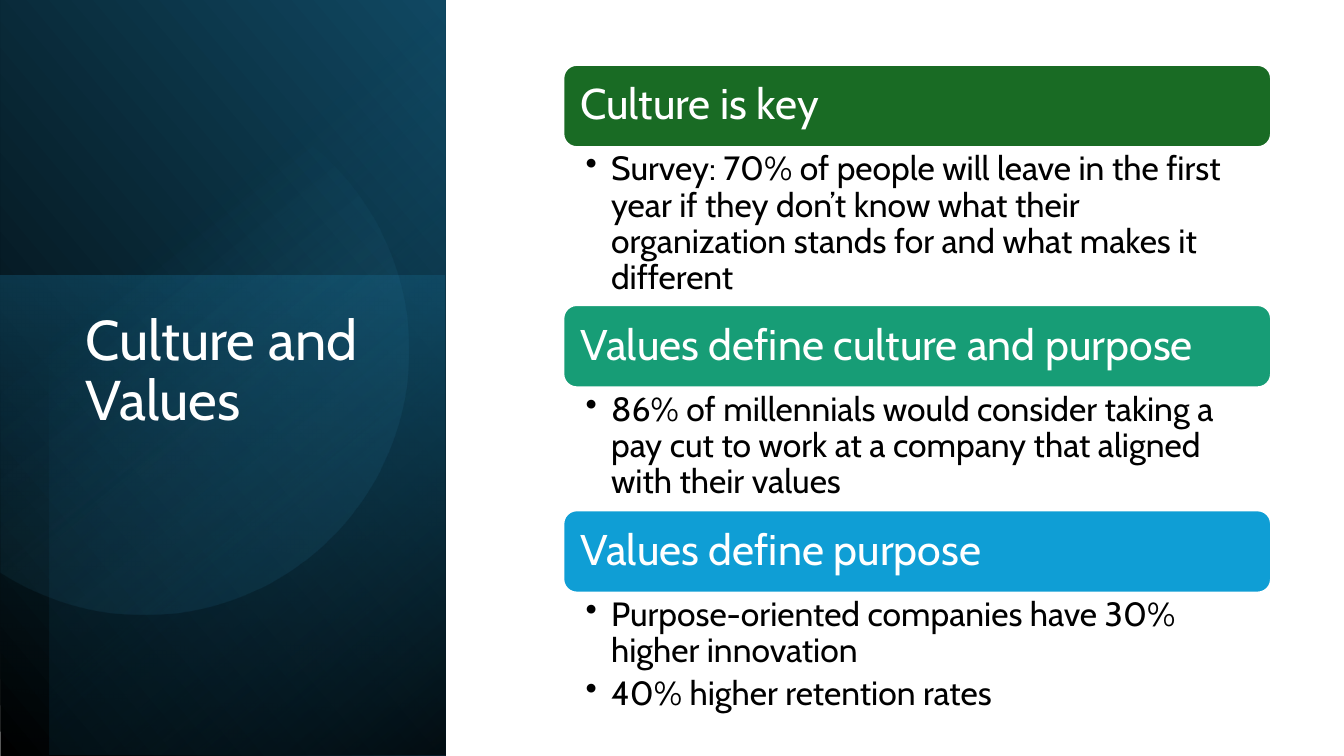
from dataclasses import dataclass
from math import cos, radians, sin

from lxml.etree import SubElement
from pptx import Presentation
from pptx.dml.color import RGBColor
from pptx.enum.shapes import MSO_SHAPE as Shape
from pptx.enum.text import MSO_ANCHOR as Anchor
from pptx.oxml.ns import qn
from pptx.util import Cm, Pt


@dataclass(frozen=True)
class Theme:
    font: str = "Cabin"
    title_size: float = 30
    heading_size: float = 23
    body_size: float = 18
    white: str = "FFFFFF"
    black: str = "000000"
    navy: str = "104862"
    teal: str = "156082"
    deep_teal: str = "0B3041"
    sky: str = "46B1E1"
    green: str = "196B24"
    sea_green: str = "179D76"
    blue: str = "0F9ED5"


def write_text(frame, paragraphs, *, font, size, color, anchor=Anchor.TOP,
               insets=(0.25, 0.13, 0.25, 0.13), space_after=0, bullet_indent=None):
    """Fill a text frame; insets and indent are in centimetres."""
    frame.word_wrap = True
    frame.vertical_anchor = anchor
    (frame.margin_left, frame.margin_top,
     frame.margin_right, frame.margin_bottom) = map(Cm, insets)
    for index, text in enumerate(paragraphs):
        paragraph = frame.add_paragraph() if index else frame.paragraphs[0]
        paragraph.line_spacing = 0.9
        paragraph.space_after = Pt(space_after)
        run = paragraph.add_run()
        run.text = text
        run.font.name = font
        run.font.size = Pt(size)
        run.font.color.rgb = RGBColor.from_string(color)
        if bullet_indent:
            properties = paragraph._p.get_or_add_pPr()
            properties.set("marL", str(Cm(bullet_indent)))
            properties.set("indent", str(-Cm(bullet_indent)))
            SubElement(properties, qn("a:buChar"), char="•")


class SlideBuilder:
    def __init__(self, slide, theme):
        self.slide = slide
        self.theme = theme

    def gradient(self, shape, stops, angle):
        """Apply two stops of (position, colour, opacity); angle is clockwise."""
        shape.shadow.inherit = False
        shape.line.fill.background()
        shape.fill.gradient()
        shape.fill.gradient_angle = 360 - angle
        for stop, (position, color, opacity) in zip(shape.fill.gradient_stops, stops):
            stop.position = position
            stop.color.rgb = RGBColor.from_string(color)
            color_element = stop._gs.find(qn("a:srgbClr"))
            SubElement(color_element, qn("a:alpha"), val=str(round(opacity * 100000)))

    def panel(self, box, stops, angle, rotation, flipped=False):
        shape = self.slide.shapes.add_shape(Shape.RECTANGLE, *map(Cm, box))
        shape.rotation = rotation
        if flipped:
            shape._element.spPr.xfrm.set("flipH", "1")
        self.gradient(shape, stops, angle)

    def cut_circle(self, center, radius, half_sweep, stops, angle, rotation):
        """Circle with its left side cut off, drawn unrotated and then turned."""
        steps = 120
        angles = [radians(-half_sweep - rotation + 2 * half_sweep * step / steps)
                  for step in range(steps + 1)]
        points = [(Cm(center[0] + radius * cos(a)), Cm(center[1] + radius * sin(a)))
                  for a in angles]
        builder = self.slide.shapes.build_freeform(*points[0])
        builder.add_line_segments(points[1:], close=True)
        shape = builder.convert_to_shape()
        shape.rotation = rotation
        self.gradient(shape, stops, angle)

    def bar(self, box, color):
        shape = self.slide.shapes.add_shape(Shape.ROUNDED_RECTANGLE, *map(Cm, box))
        shape.shadow.inherit = False
        shape.fill.solid()
        shape.fill.fore_color.rgb = RGBColor.from_string(color)
        shape.line.color.rgb = RGBColor.from_string(self.theme.white)
        shape.line.width = Pt(1.5)

    def text(self, box, paragraphs, **style):
        text_box = self.slide.shapes.add_textbox(*map(Cm, box))
        write_text(text_box.text_frame, paragraphs, font=self.theme.font, **style)


def main():
    theme = Theme()
    presentation = Presentation()
    presentation.slide_width = Cm(25.4)
    presentation.slide_height = Cm(14.29)
    slide = presentation.slides.add_slide(presentation.slide_layouts[6])
    builder = SlideBuilder(slide, theme)

    # Layered gradient panel on the left
    builder.panel((-2.95, 2.95, 14.33, 8.41),
                  [(0, theme.black, 1), (1, theme.navy, 1)],
                  angle=310, rotation=90, flipped=True)
    builder.panel((-0.33, 5.54, 9.07, 8.41),
                  [(0, theme.teal, 0.5), (1, theme.deep_teal, 0)],
                  angle=190, rotation=270)
    builder.panel((-2.46, 3.4, 14.27, 7.47),
                  [(0, theme.black, 0.59), (0.69, theme.teal, 0)],
                  angle=220, rotation=270, flipped=True)
    builder.cut_circle((3.45, 7.52), 5, 122.9,
                       [(0.39, theme.sky, 0), (1, theme.navy, 0.26)],
                       angle=310, rotation=101.6)

    # Title
    builder.text((1.37, 5.77, 5.99, 6.4), ["Culture and Values"],
                 size=theme.title_size, color=theme.white)

    # Stacked headings, each followed by its bullets
    sections = [
        ("Culture is key", theme.green, 2.97,
         ["Survey: 70% of people will leave in the first year if they don’t know "
          "what their organization stands for and what makes it different"]),
        ("Values define culture and purpose", theme.sea_green, 2.31,
         ["86% of millennials would consider taking a pay cut to work at a company "
          "that aligned with their values"]),
        ("Values define purpose", theme.blue, 2.44,
         ["Purpose-oriented companies have 30% higher innovation",
          "40% higher retention rates"]),
    ]
    left, top, width, bar_height, edge = 10.64, 1.22, 13.39, 1.57, 0.08
    for heading, color, body_height, bullets in sections:
        builder.bar((left, top, width, bar_height), color)
        builder.text((left + edge, top + edge, width - 2 * edge, bar_height - 2 * edge),
                     [heading], size=theme.heading_size, color=theme.white,
                     anchor=Anchor.MIDDLE, insets=(0.25,) * 4)
        top += bar_height
        builder.text((left, top, width, body_height), bullets,
                     size=theme.body_size, color=theme.black, space_after=3.6,
                     insets=(0.43, 0.08, 0.46, 0.08), bullet_indent=0.48)
        top += body_height

    presentation.save("out.pptx")


if __name__ == "__main__":
    main()
